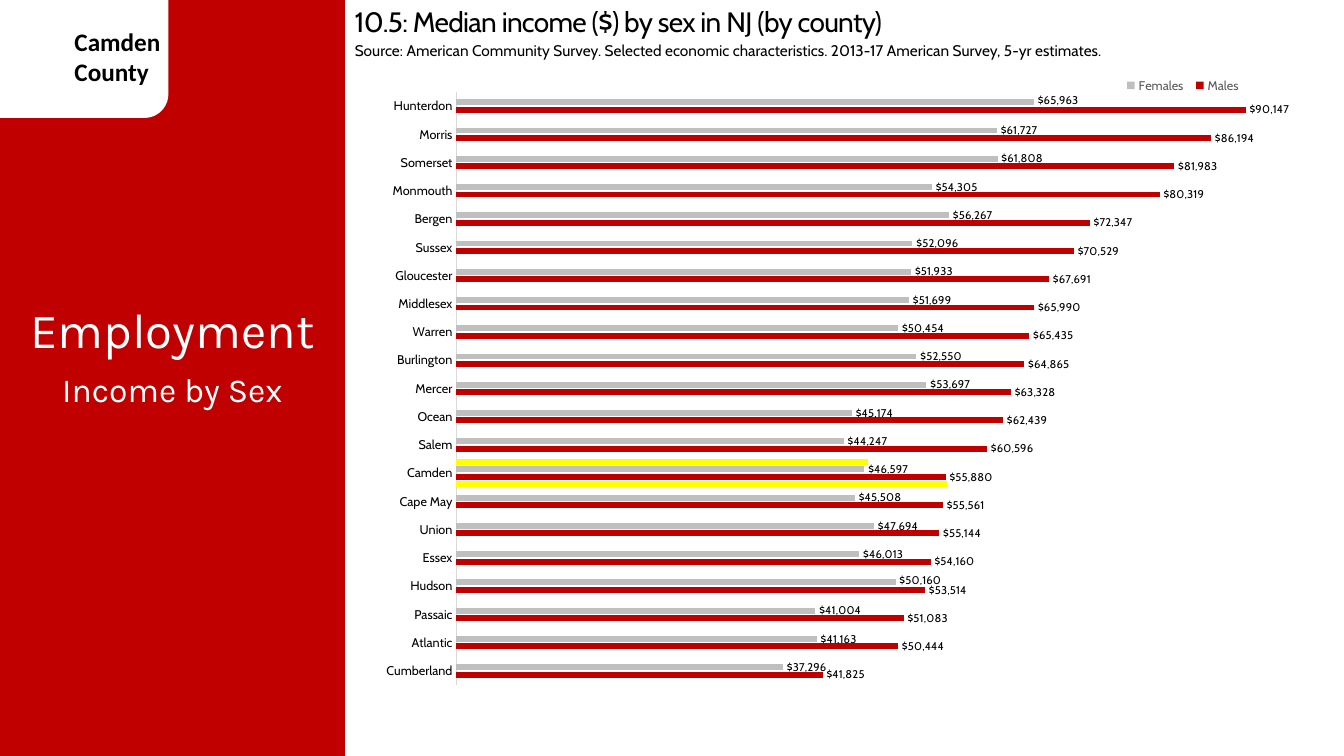
"""Build the slide on median income by sex in the counties of New Jersey."""
import lxml.etree
import pptx
import pptx.chart.data
import pptx.dml.color
import pptx.enum.chart
import pptx.enum.shapes
import pptx.enum.text
import pptx.oxml.ns
import pptx.util

COLORS = {
    "red": "C00000", "white": "FFFFFF", "black": "000000", "silver": "BFBFBF",
    "yellow": "FFFF00", "axis": "D9D9D9", "legend": "595959",
}
EMU_PER_PX = 9144
DOLLARS = '"$"#,##0_);[Red]\\("$"#,##0\\)'
INCOMES = [
    ("Cumberland", 41825, 37296), ("Atlantic", 50444, 41163),
    ("Passaic", 51083, 41004), ("Hudson", 53514, 50160),
    ("Essex", 54160, 46013), ("Union", 55144, 47694),
    ("Cape May", 55561, 45508), ("Camden", 55880, 46597),
    ("Salem", 60596, 44247), ("Ocean", 62439, 45174),
    ("Mercer", 63328, 53697), ("Burlington", 64865, 52550),
    ("Warren", 65435, 50454), ("Middlesex", 65990, 51699),
    ("Gloucester", 67691, 51933), ("Sussex", 70529, 52096),
    ("Bergen", 72347, 56267), ("Monmouth", 80319, 54305),
    ("Somerset", 81983, 61808), ("Morris", 86194, 61727),
    ("Hunterdon", 90147, 65963),
]
RAISED_LABELS = ("Hudson", "Hunterdon")


def px(length):
    return pptx.util.Emu(length * EMU_PER_PX)


def rgb(color):
    return pptx.dml.color.RGBColor.from_string(COLORS[color])


def element(tag, **attributes):
    node = lxml.etree.Element(pptx.oxml.ns.qn(tag))
    for name, value in attributes.items():
        node.set(name, str(value))
    return node


def layout(**settings):
    outer = element("c:layout")
    manual = element("c:manualLayout")
    outer.append(manual)
    for name, value in settings.items():
        manual.append(element(f"c:{name}", val=value))
    return outer


def drop_layout(parent):
    for old in parent.findall(pptx.oxml.ns.qn("c:layout")):
        parent.remove(old)


class SlideBuilder:
    def __init__(self, slide, font="Cabin"):
        self.slide = slide
        self.font = font

    def style(self, font, size, color="black", name=None, bold=False):
        font.name = name or self.font
        font.size = pptx.util.Pt(size)
        font.bold = bold
        font.color.rgb = rgb(color)

    def panel(self, kind, left, top, width, height, color):
        panel = self.slide.shapes.add_shape(kind, px(left), px(top), px(width), px(height))
        panel.shadow.inherit = False
        panel.fill.solid()
        panel.fill.fore_color.rgb = rgb(color)
        panel.line.fill.background()

    def text(self, lines, left, top, width, height, size, color="black",
             name=None, bold=False, centered=False, spacing=0):
        frame = self.slide.shapes.add_textbox(px(left), px(top), px(width), px(height)).text_frame
        frame.word_wrap = True
        frame.text = "\n".join(lines)
        for paragraph in frame.paragraphs:
            self.style(paragraph.font, size, color, name, bold)
            if centered:
                paragraph.alignment = pptx.enum.text.PP_ALIGN.CENTER
            if spacing:
                for run in paragraph.runs:
                    run._r.get_or_add_rPr().set("spc", str(spacing))

    def income_chart(self, left, top, width, height):
        counties, males, females = zip(*INCOMES)
        camden = counties.index("Camden")

        def highlight(value):
            return [value if place == camden else None for place in range(len(counties))]

        series_table = [
            ("Series 1", highlight(56000), "yellow"),
            ("Males", males, "red"),
            ("Females", females, "silver"),
            ("Series 4", highlight(47000), "yellow"),
        ]
        data = pptx.chart.data.CategoryChartData(number_format=DOLLARS)
        data.categories = counties
        for name, values, _ in series_table:
            data.add_series(name, values)
        chart = self.slide.shapes.add_chart(
            pptx.enum.chart.XL_CHART_TYPE.BAR_CLUSTERED,
            px(left), px(top), px(width), px(height), data).chart
        chart.has_title = False
        self.style(chart.font, 10, name="Calibri")

        plot = chart.plots[0]
        plot.gap_width = 0
        plot.overlap = -26
        plot.vary_by_categories = False
        for series, (name, _, color) in zip(plot.series, series_table):
            series.format.fill.solid()
            series.format.fill.fore_color.rgb = rgb(color)
            series.invert_if_negative = False
            if color != "yellow":
                self.value_labels(series)
            if name == "Females":
                for county in RAISED_LABELS:
                    self.raise_label(series.points[counties.index(county)])

        self.axes(chart)
        self.legend(chart)
        area = chart._chartSpace.chart.plotArea
        drop_layout(area)
        area.insert(0, layout(layoutTarget="inner", xMode="edge", yMode="edge",
                              x=0.109, y=0.033, w=0.887, h=0.96))

    def value_labels(self, series):
        labels = series.data_labels
        labels.show_value = True
        labels.number_format = DOLLARS
        labels.number_format_is_linked = False
        labels.position = pptx.enum.chart.XL_LABEL_POSITION.OUTSIDE_END
        self.style(labels.font, 8)

    def raise_label(self, point):
        label = point.data_label
        self.style(label.font, 8)
        label.position = pptx.enum.chart.XL_LABEL_POSITION.OUTSIDE_END
        label._dLbl.insert(1, layout(x=0, y=-0.004))

    def axes(self, chart):
        county_axis, income_axis = chart.category_axis, chart.value_axis
        county_axis.major_tick_mark = pptx.enum.chart.XL_TICK_MARK.NONE
        county_axis.format.line.color.rgb = rgb("axis")
        county_axis.format.line.width = pptx.util.Pt(0.75)
        self.style(county_axis.tick_labels.font, 9)
        income_axis.minimum_scale = 0
        income_axis.maximum_scale = 100000
        income_axis.has_major_gridlines = False
        income_axis.visible = False

    def legend(self, chart):
        chart.has_legend = True
        legend = chart.legend
        legend.position = pptx.enum.chart.XL_LEGEND_POSITION.BOTTOM
        legend.include_in_layout = False
        self.style(legend.font, 9, "legend")
        root = legend._element
        drop_layout(root)
        place = root.find(pptx.oxml.ns.qn("c:legendPos"))
        place.addnext(layout(xMode="edge", yMode="edge", x=0.78, y=0.005, w=0.13, h=0.035))
        for hidden in (3, 0):
            entry = element("c:legendEntry")
            entry.append(element("c:idx", val=hidden))
            entry.append(element("c:delete", val=1))
            place.addnext(entry)


def main():
    deck = pptx.Presentation()
    deck.slide_width, deck.slide_height = px(1333), px(750)
    page = SlideBuilder(deck.slides.add_slide(deck.slide_layouts[6]))
    shapes = pptx.enum.shapes.MSO_SHAPE
    page.panel(shapes.RECTANGLE, 0, 0, 342, 750, "red")
    page.panel(shapes.ROUNDED_RECTANGLE, -33, -25, 200, 142, "white")
    page.text(["Camden", "County"], 64, 21, 117, 71, 18, name="Calibri", bold=True)
    page.text(["Employment"], 0, 292, 342, 69, 35, "white", "Karla", centered=True)
    page.text(["Income by Sex"], 0, 361, 342, 50, 24, "white", "Karla", centered=True)
    page.text(["Source: American Community Survey. Selected economic characteristics. "
               "2013-17 American Survey, 5-yr estimates."], 342, 36, 919, 29, 11)
    page.income_chart(346, 71, 979, 613)
    page.text(["10.5: Median income ($) by sex in NJ (by county)"],
              342, 0, 986, 44, 20, spacing=-50)
    deck.save("out.pptx")


if __name__ == "__main__":
    main()
